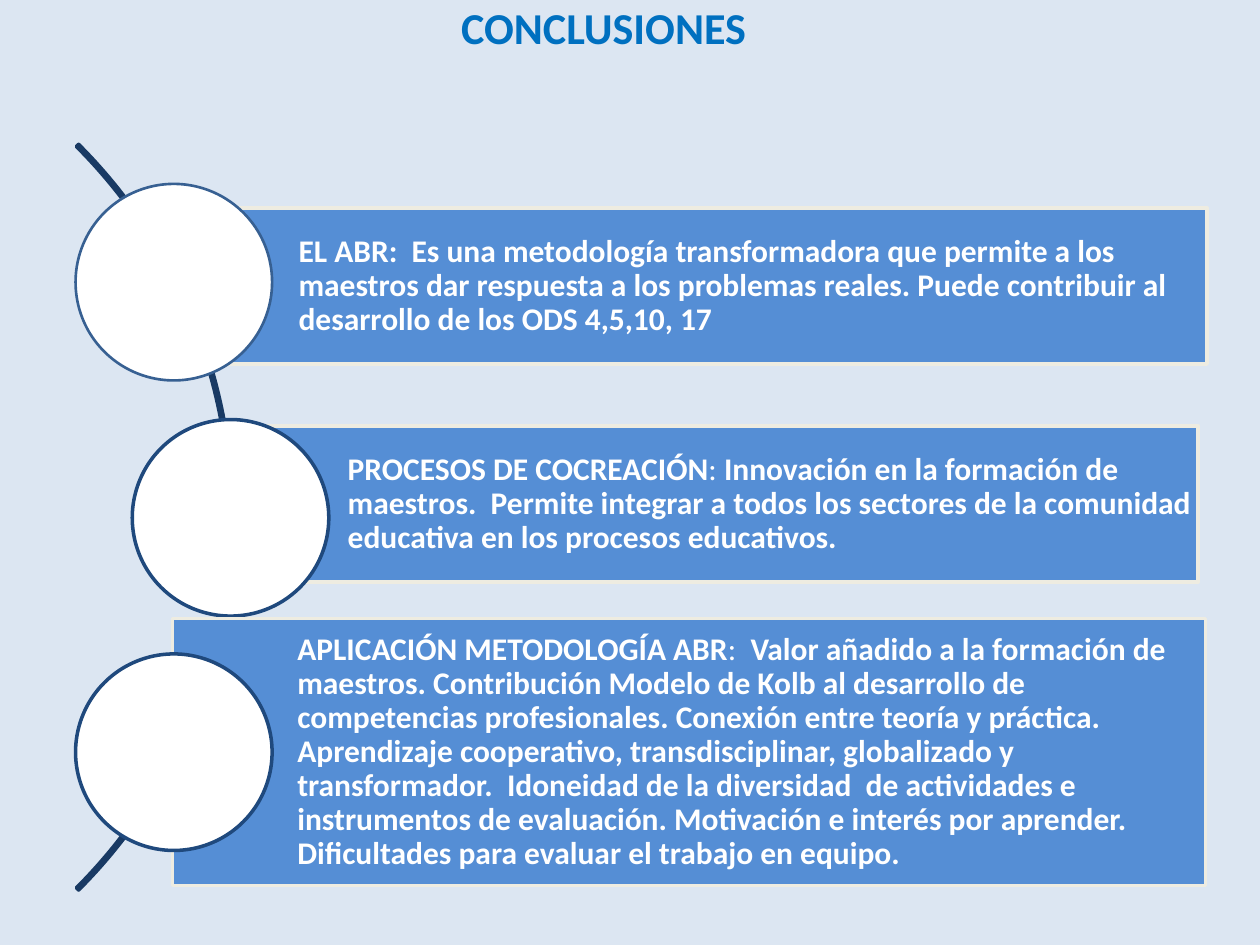
from dataclasses import dataclass

from pptx import Presentation
from pptx.dml.color import RGBColor
from pptx.enum import shapes, text
from pptx.util import Inches, Pt


@dataclass(frozen=True)
class Theme:
    font: str = "Calibri"
    background: str = "DCE6F2"
    title: str = "0070C0"
    arc: str = "193A64"
    panel: str = "558ED5"
    panel_line: str = "EEECE1"
    white: str = "FFFFFF"
    first_ring: str = "376092"
    ring: str = "1F497D"
    title_size: float = 25.2
    body_size: float = 18
    line_width: float = 2
    thin_line: float = 1.5


THEME = Theme()
CIRCLE = 1.56

# Panel box, circle corner, ring colour and width, text pieces as (wording, bold)
CONCLUSIONS = [
    ((1.38, 1.65, 8.2, 1.24), (0.6, 1.46), THEME.first_ring, THEME.thin_line, [
        ("EL ABR:  Es una metodología transformadora que permite a los maestros "
         "dar respuesta a los problemas reales. Puede contribuir al desarrollo "
         "de los ODS 4,5,10, 17", True)]),
    ((1.77, 3.38, 7.74, 1.24), (1.05, 3.33), THEME.ring, THEME.line_width, [
        ("PROCESOS DE COCREACIÓN", True),
        (": ", False),
        ("Innovación en la formación de maestros.  Permite integrar a todos los "
         "sectores de la comunidad educativa en los procesos educativos.", True)]),
    ((1.37, 4.91, 8.2, 2.12), (0.6, 5.19), THEME.ring, THEME.line_width, [
        ("APLICACIÓN METODOLOGÍA ABR", True),
        (":  ", False),
        ("Valor añadido a la formación de maestros. Contribución Modelo de Kolb "
         "al desarrollo de competencias profesionales. Conexión entre teoría y "
         "práctica. Aprendizaje cooperativo, transdisciplinar, globalizado y "
         "transformador.  Idoneidad de la diversidad  de actividades e "
         "instrumentos de evaluación. Motivación e interés por aprender.  "
         "Dificultades para evaluar el trabajo en equipo.", True)]),
]


def color(value):
    return RGBColor.from_string(value)


def add_outlined(page, kind, box, fill, line, width):
    shape = page.shapes.add_shape(kind, *map(Inches, box))
    shape.shadow.inherit = False
    if fill:
        shape.fill.solid()
        shape.fill.fore_color.rgb = color(fill)
    else:
        shape.fill.background()
    shape.line.color.rgb = color(line)
    shape.line.width = Pt(width)
    return shape


def set_font(font, size, value):
    font.name = THEME.font
    font.size = Pt(size)
    font.color.rgb = color(value)


def add_title(page, box):
    frame = page.shapes.add_textbox(*map(Inches, box)).text_frame
    frame.word_wrap = True
    frame.vertical_anchor = text.MSO_ANCHOR.MIDDLE
    frame.margin_top = frame.margin_bottom = 0
    para = frame.paragraphs[0]
    para.text = "CONCLUSIONES "
    para.alignment = text.PP_ALIGN.CENTER
    set_font(para.font, THEME.title_size, THEME.title)
    para.font.bold = True


def add_arc(page, box):
    arc = add_outlined(page, shapes.MSO_SHAPE.BLOCK_ARC, box, None,
                       THEME.arc, THEME.line_width)
    # Start and end angles of 315 and 45 degrees, then the band thickness
    for index, value in enumerate((189, 27, 0.003)):
        arc.adjustments[index] = value


def add_panel(page, box, pieces):
    panel = add_outlined(page, shapes.MSO_SHAPE.RECTANGLE, box, THEME.panel,
                         THEME.panel_line, THEME.line_width)
    frame = panel.text_frame
    frame.word_wrap = True
    frame.vertical_anchor = text.MSO_ANCHOR.MIDDLE
    frame.margin_left = Inches(0.99)
    frame.margin_top = frame.margin_right = frame.margin_bottom = Inches(0.05)
    para = frame.paragraphs[0]
    para.alignment = text.PP_ALIGN.LEFT
    para.line_spacing = 0.9
    set_font(para.font, THEME.body_size, THEME.white)
    for wording, bold in pieces:
        span = para.add_run()
        span.text = wording
        span.font.bold = bold


def add_conclusion(page, box, corner, ring, width, pieces):
    add_panel(page, box, pieces)
    add_outlined(page, shapes.MSO_SHAPE.OVAL, (*corner, CIRCLE, CIRCLE),
                 THEME.white, ring, width)


def main():
    deck = Presentation()
    deck.slide_width, deck.slide_height = Inches(10), Inches(7.5)
    page = deck.slides.add_slide(deck.slide_layouts[6])
    page.background.fill.solid()
    page.background.fill.fore_color.rgb = color(THEME.background)

    # Heading
    add_title(page, (1.77, 0, 6.12, 0.42))

    # Curve with the three conclusions along it
    add_arc(page, (-6.52, -0.08, 8.37, 8.37))
    for conclusion in CONCLUSIONS:
        add_conclusion(page, *conclusion)

    deck.save("out.pptx")


if __name__ == "__main__":
    main()
